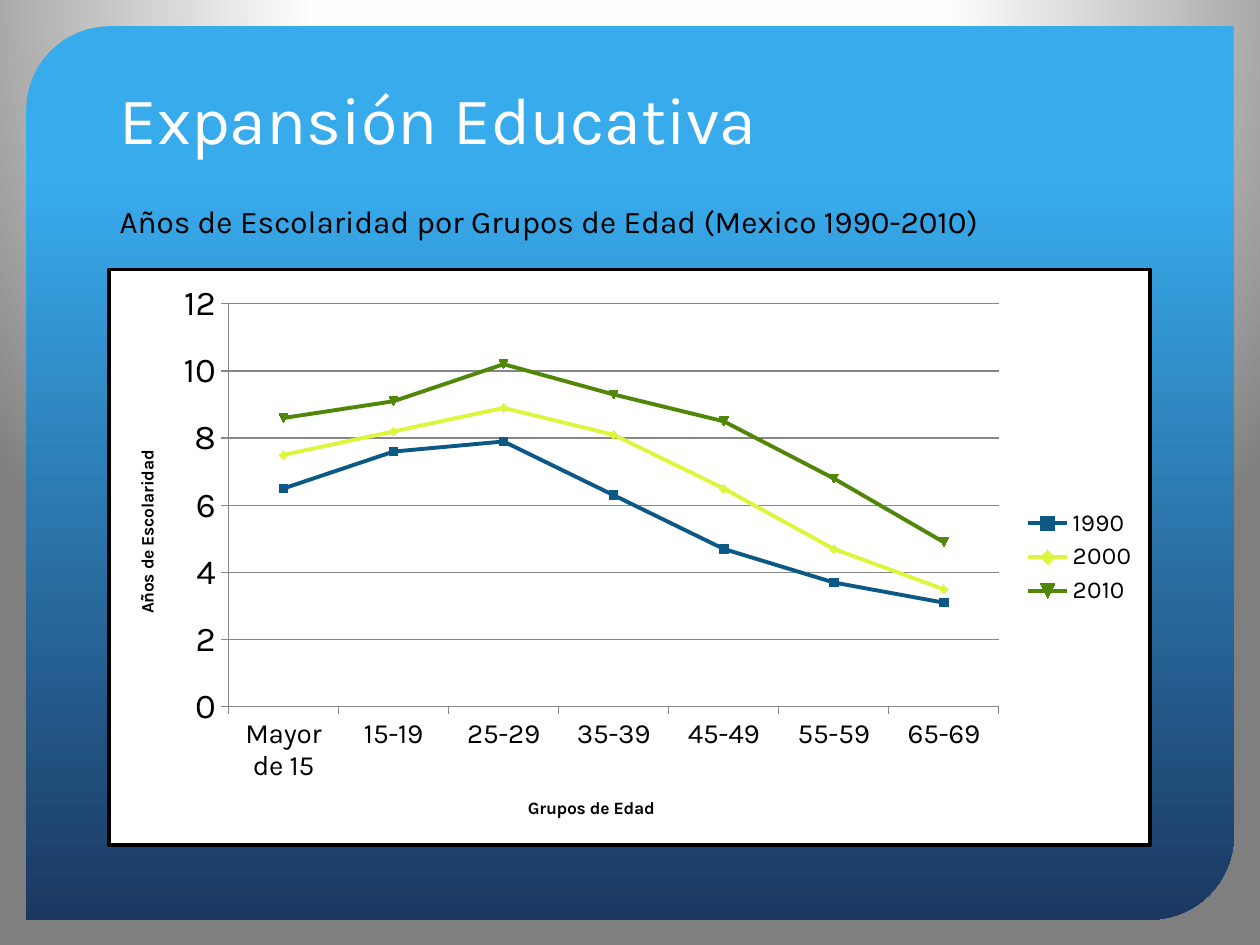
"""Build the slide on years of schooling by age group in Mexico."""
from lxml import etree
from pptx import Presentation
from pptx.chart.data import CategoryChartData
from pptx.dml.color import RGBColor
from pptx.enum.chart import XL_CHART_TYPE as CT, XL_LEGEND_POSITION as LP, XL_TICK_MARK as TICK
from pptx.enum.shapes import MSO_SHAPE as SHAPE
from pptx.enum.text import MSO_ANCHOR as ANCHOR, MSO_AUTO_SIZE as AUTO, PP_ALIGN as ALIGN
from pptx.oxml import parse_xml
from pptx.oxml.ns import nsdecls, qn
from pptx.util import Pt

FONT = "Karla"
LEFT, WIDTH = 61.2, 596.9
TITLE = "Expansión Educativa"
SUBTITLE = "Años de Escolaridad por Grupos de Edad (Mexico 1990-2010)"
AGES = ["Mayor de 15", "15-19", "25-29", "35-39", "45-49", "55-59", "65-69"]
SERIES = [
    ("1990", "0C5986", [6.5, 7.6, 7.9, 6.3, 4.7, 3.7, 3.1]),
    ("2000", "DDF53D", [7.5, 8.2, 8.9, 8.1, 6.5, 4.7, 3.5]),
    ("2010", "508709", [8.6, 9.1, 10.2, 9.3, 8.5, 6.8, 4.9]),
]
BACKDROP = [(0, "FFFFFF"), (40, "FEFEFE"), (100, "7F7F7F")]
BACKDROP_PATH = ('<a:path path="circle"><a:fillToRect l="50000" t="-80000" '
                 'r="50000" b="180000"/></a:path>')
PANEL = [(17, "38ABED"), (100, "1B3861")]
PANEL_PATH = '<a:lin ang="5400000" scaled="0"/>'
PLOT = {"x": 0.115, "y": 0.06, "w": 0.74, "h": 0.7}


def rgb(color):
    return RGBColor.from_string(color)


def style(font, size, color="000000", bold=False):
    font.name, font.size, font.bold = FONT, Pt(size), bold
    font.color.rgb = rgb(color)


def write(tf, text, size, color="000000", bold=False, align=None):
    p = tf.paragraphs[0]
    p.alignment = align
    r = p.add_run()
    r.text = text
    style(r.font, size, color, bold)


def gradient(stops, direction):
    marks = "".join(f'<a:gs pos="{pos * 1000}"><a:srgbClr val="{color}"/></a:gs>'
                    for pos, color in stops)
    return parse_xml(f'<a:gradFill {nsdecls("a")} rotWithShape="1">'
                     f'<a:gsLst>{marks}</a:gsLst>{direction}</a:gradFill>')


def set_gradient(fill, parent, stops, direction):
    fill.solid()
    old = parent.find(qn("a:solidFill"))
    parent.replace(old, gradient(stops, direction))


def stroke(line, color, width):
    line.color.rgb = rgb(color)
    line.width = Pt(width)


def add_panel(s):
    sp = s.shapes.add_shape(SHAPE.ROUND_2_DIAG_RECTANGLE, Pt(15), Pt(15), Pt(690), Pt(510.5))
    sp.adjustments[0], sp.adjustments[1] = 0.094, 0
    sp.shadow.inherit = False
    sp.line.fill.background()
    set_gradient(sp.fill, sp._element.spPr, PANEL, PANEL_PATH)
    s.shapes._spTree.insert(2, sp._element)


def add_heading(s):
    sp = s.shapes.title
    sp.left, sp.top, sp.width, sp.height = Pt(LEFT), Pt(30.2), Pt(WIDTH), Pt(63.4)
    sp.text_frame.vertical_anchor = ANCHOR.BOTTOM
    write(sp.text_frame, TITLE, 38, "FFFFFF", align=ALIGN.LEFT)


def add_subtitle(s):
    sp = s.shapes.add_textbox(Pt(LEFT), Pt(111.6), Pt(WIDTH), Pt(29))
    tf = sp.text_frame
    tf.word_wrap, tf.auto_size = True, AUTO.SHAPE_TO_FIT_TEXT
    write(tf, SUBTITLE, 18)


def format_axis(axis, title, size):
    axis.major_tick_mark, axis.minor_tick_mark = TICK.OUTSIDE, TICK.NONE
    style(axis.tick_labels.font, size)
    stroke(axis.format.line, "868686", 0.75)
    write(axis.axis_title.text_frame, title, 10, bold=True)


def frame_chart(chart):
    area = parse_xml(f'<c:spPr {nsdecls("c", "a")}>'
                     '<a:solidFill><a:srgbClr val="FFFFFF"/></a:solidFill>'
                     '<a:ln w="25400"><a:solidFill><a:srgbClr val="000000"/></a:solidFill></a:ln>'
                     '</c:spPr>')
    root = chart._chartSpace
    root.find(qn("c:chart")).addnext(area)
    plot = root.find(".//" + qn("c:plotArea"))
    for old in plot.findall(qn("c:layout")):
        plot.remove(old)
    layout = etree.Element(qn("c:layout"))
    manual = etree.SubElement(layout, qn("c:manualLayout"))
    parts = {"layoutTarget": "inner", "xMode": "edge", "yMode": "edge", **PLOT}
    for name, val in parts.items():
        etree.SubElement(manual, qn("c:" + name)).set("val", str(val))
    plot.insert(0, layout)


def add_schooling_chart(s):
    data = CategoryChartData(number_format="General")
    data.categories = AGES
    for name, _, vals in SERIES:
        data.add_series(name, vals)
    chart = s.shapes.add_chart(CT.LINE_MARKERS, Pt(LEFT), Pt(152.9), Pt(WIDTH), Pt(331), data).chart
    style(chart.font, 10)
    chart.has_title = False
    chart.has_legend = True
    chart.legend.position, chart.legend.include_in_layout = LP.RIGHT, False
    style(chart.legend.font, 14)
    format_axis(chart.category_axis, "Grupos de Edad", 16)
    axis = chart.value_axis
    format_axis(axis, "Años de Escolaridad", 20)
    axis.minimum_scale, axis.maximum_scale, axis.major_unit = 0, 12, 2
    stroke(axis.major_gridlines.format.line, "868686", 0.75)
    chart.plots[0].vary_by_categories = False
    for line, (_, color, _) in zip(chart.plots[0].series, SERIES):
        line.smooth = False
        stroke(line.format.line, color, 2.25)
        line.marker.size = 5
        line.marker.format.fill.solid()
        line.marker.format.fill.fore_color.rgb = rgb(color)
        stroke(line.marker.format.line, color, 0.75)
    frame_chart(chart)


def main():
    prs = Presentation()
    prs.slide_width, prs.slide_height = Pt(720), Pt(540)
    s = prs.slides.add_slide(prs.slide_layouts[5])
    fill = s.background.fill
    set_gradient(fill, s._element.cSld.bg.bgPr, BACKDROP, BACKDROP_PATH)
    add_panel(s)
    add_heading(s)
    add_schooling_chart(s)
    add_subtitle(s)
    prs.save("out.pptx")


if __name__ == "__main__":
    main()
